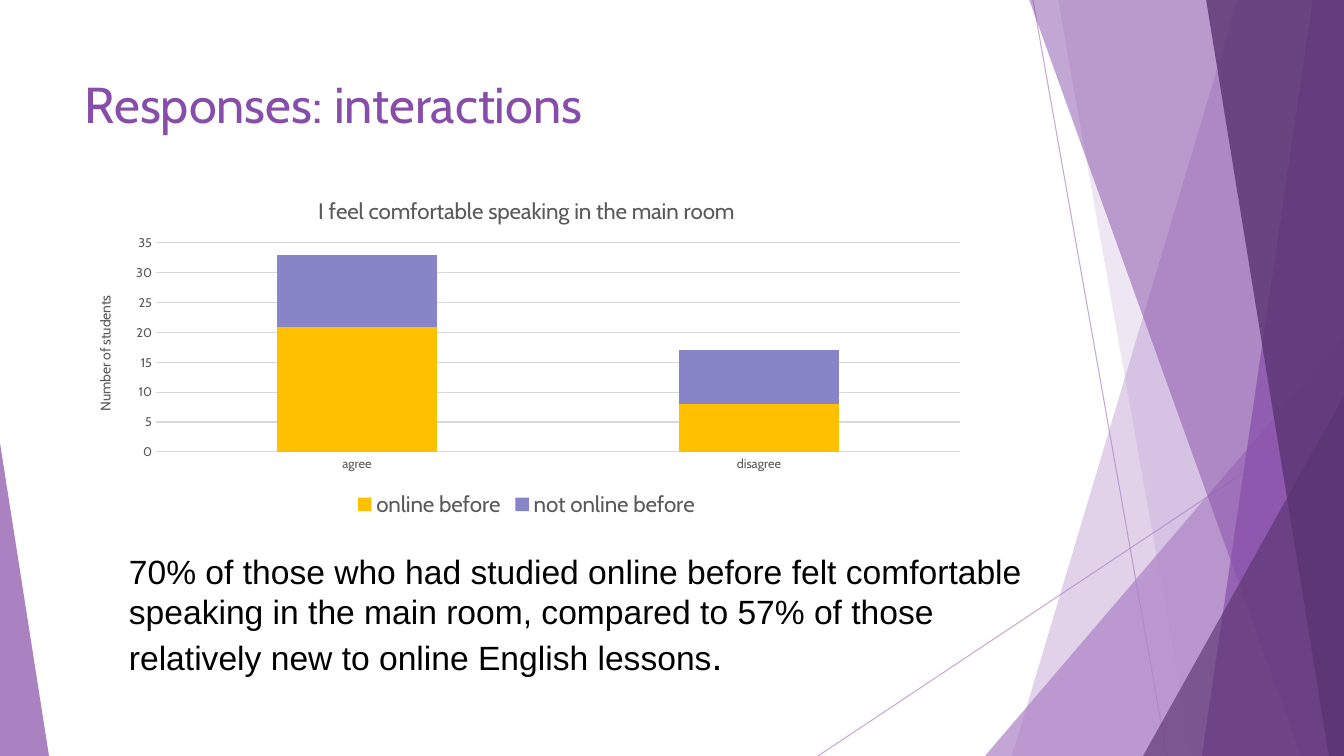
from dataclasses import dataclass
from lxml import etree
from pptx import Presentation, util as u
from pptx.chart.data import CategoryChartData
from pptx.dml.color import RGBColor
from pptx.enum import chart as ch, shapes as sh, text as tx
from pptx.oxml import parse_xml
from pptx.oxml.ns import nsdecls, qn


@dataclass(frozen=True)
class Theme:
    lilac: str = "AD84C6"
    purple: str = "874EA9"
    plum: str = "5A3471"
    black: str = "000000"
    gray: str = "595959"
    grid: str = "D9D9D9"
    head: int = 36
    body: int = 24
    stop: int = 28
    label: int = 16
    axis: int = 10
    tick: int = 9
    hair: float = 0.75
    sans: str = "Cabin"
    plain: str = "Arial"


T = Theme()
W, H = 1344, 756
TITLE = "Responses: interactions"
BODY = ("70% of those who had studied online before felt comfortable speaking in the "
        "main room, compared to 57% of those relatively new to online English lessons")
CHART = "I feel comfortable speaking in the main room"
AXIS = "Number of students"
CATS = ["agree", "disagree"]
SERIES = [("online before", [21, 8], "FFC000"),
          ("not online before", [12, 9], "8784C7")]
BOXES = {"title": (75, 68, 948, 145), "body": (119, 546, 945, 172),
         "chart": (75, 180, 903, 342)}
PLOT = (156, 243, 804, 209)

RAYS = [(1033, 0, 1167, H), (W, 406, 818, H)]
# Bands run to the right edge: top x, bottom x. Wedges: left, top, width, apex.
DECOR = [("band", (1238, 1012), T.lilac, 36),
         ("band", (1058, 1192), T.lilac, 20),
         ("wedge", (985, 336, 359, 1), T.lilac, 72),
         ("band", (1029, 1301), T.purple, 50),
         ("band", (1313, 1202), T.purple, 70),
         ("band", (1206, 1329), T.plum, 80),
         ("wedge", (1143, 396, 201, 1), T.plum, 66),
         ("wedge", (0, 443, 49, 0), T.purple, 70)]


def px(n):
    return u.Emu(round(n * 914400 / 100.8))


def rgb(c):
    return RGBColor.from_string(c)


def fade(fill, pct):
    """Set the opacity of a solid fill, in percent."""
    tone = fill._xPr.find(qn("a:solidFill"))[0]
    etree.SubElement(tone, qn("a:alpha")).set("val", str(pct * 1000))


def style(font, size, tone, face=T.sans):
    font.size, font.name, font.bold = u.Pt(size), face, False
    font.color.rgb = rgb(tone)


def ray(slide, ends):
    line = slide.shapes.add_connector(sh.MSO_CONNECTOR.STRAIGHT, *map(px, ends))
    line.line.width = u.Pt(T.hair)
    line.line.fill.solid()
    line.line.color.rgb = rgb(T.lilac)
    fade(line.line.fill, 70)
    etree.SubElement(line._element.spPr, qn("a:effectLst"))


def decor(slide, kind, geo, tone, pct):
    if kind == "band":
        top, low = geo
        form = slide.shapes.build_freeform(px(top), px(-1), scale=1.0)
        form.add_line_segments([(px(W), px(-1)), (px(W), px(H)), (px(low), px(H))])
        part = form.convert_to_shape()
    else:
        x, y, wide, apex = geo
        part = slide.shapes.add_shape(sh.MSO_SHAPE.ISOSCELES_TRIANGLE,
                                      *map(px, (x, y, wide, H - y)))
        part.adjustments[0] = apex
    part.shadow.inherit = False
    part.line.fill.background()
    part.fill.solid()
    part.fill.fore_color.rgb = rgb(tone)
    fade(part.fill, pct)


def write(slide, box, runs, tone, face, gap=0):
    frame = slide.shapes.add_textbox(*map(px, box)).text_frame
    frame.word_wrap = True
    frame.vertical_anchor = tx.MSO_ANCHOR.TOP
    para = frame.paragraphs[0]
    para.space_before = u.Pt(gap)
    for words, size in runs:
        run = para.add_run()
        run.text = words
        style(run.font, size, tone, face)


def label(title, words, size):
    run = title.text_frame.paragraphs[0].add_run()
    run.text = words
    style(run.font, size, T.gray)


def place(chart):
    """Fix the inner plot area inside the chart box."""
    left, top, wide, high = BOXES["chart"]
    x, y, w, h = PLOT
    parts = {"x": (x - left) / wide, "y": (y - top) / high, "w": w / wide, "h": h / high}
    rows = "".join(f'<c:{k} val="{v:.4f}"/>' for k, v in parts.items())
    area = chart._chartSpace.chart.plotArea
    for old in area.findall(qn("c:layout")):
        area.remove(old)
    area.insert(0, parse_xml(
        f'<c:layout {nsdecls("c")}><c:manualLayout><c:layoutTarget val="inner"/>'
        f'<c:xMode val="edge"/><c:yMode val="edge"/>{rows}</c:manualLayout></c:layout>'))


def graph(slide):
    data = CategoryChartData()
    data.categories = CATS
    for name, vals, _ in SERIES:
        data.add_series(name, vals)
    chart = slide.shapes.add_chart(ch.XL_CHART_TYPE.COLUMN_STACKED,
                                   *map(px, BOXES["chart"]), data).chart
    style(chart.font, T.axis, T.black)
    label(chart.chart_title, CHART, T.label)
    chart.has_legend = True
    chart.legend.position = ch.XL_LEGEND_POSITION.BOTTOM
    chart.legend.include_in_layout = False
    style(chart.legend.font, T.label, T.gray)

    plot = chart.plots[0]
    plot.gap_width, plot.overlap, plot.vary_by_categories = 150, 100, False
    for bar, (_, _, tone) in zip(plot.series, SERIES):
        bar.format.fill.solid()
        bar.format.fill.fore_color.rgb = rgb(tone)

    cat, val = chart.category_axis, chart.value_axis
    for axis in (cat, val):
        axis.major_tick_mark = axis.minor_tick_mark = ch.XL_TICK_MARK.NONE
        style(axis.tick_labels.font, T.tick, T.gray)
    val.minimum_scale, val.maximum_scale, val.major_unit = 0, 35, 5
    val.format.line.fill.background()
    val.has_major_gridlines = True
    for line in (cat.format.line, val.major_gridlines.format.line):
        line.width = u.Pt(T.hair)
        line.color.rgb = rgb(T.grid)
    label(val.axis_title, AXIS, T.axis)
    place(chart)


def main():
    deck = Presentation()
    deck.slide_width, deck.slide_height = px(W), px(H)
    slide = deck.slides.add_slide(deck.slide_layouts[6])
    for ends in RAYS:
        ray(slide, ends)
    for item in DECOR:
        decor(slide, *item)
    write(slide, BOXES["title"], [(TITLE, T.head)], T.purple, T.sans)
    write(slide, BOXES["body"], [(BODY, T.body), (".", T.stop)], T.black, T.plain, 5)
    graph(slide)
    deck.save("out.pptx")


if __name__ == "__main__":
    main()
